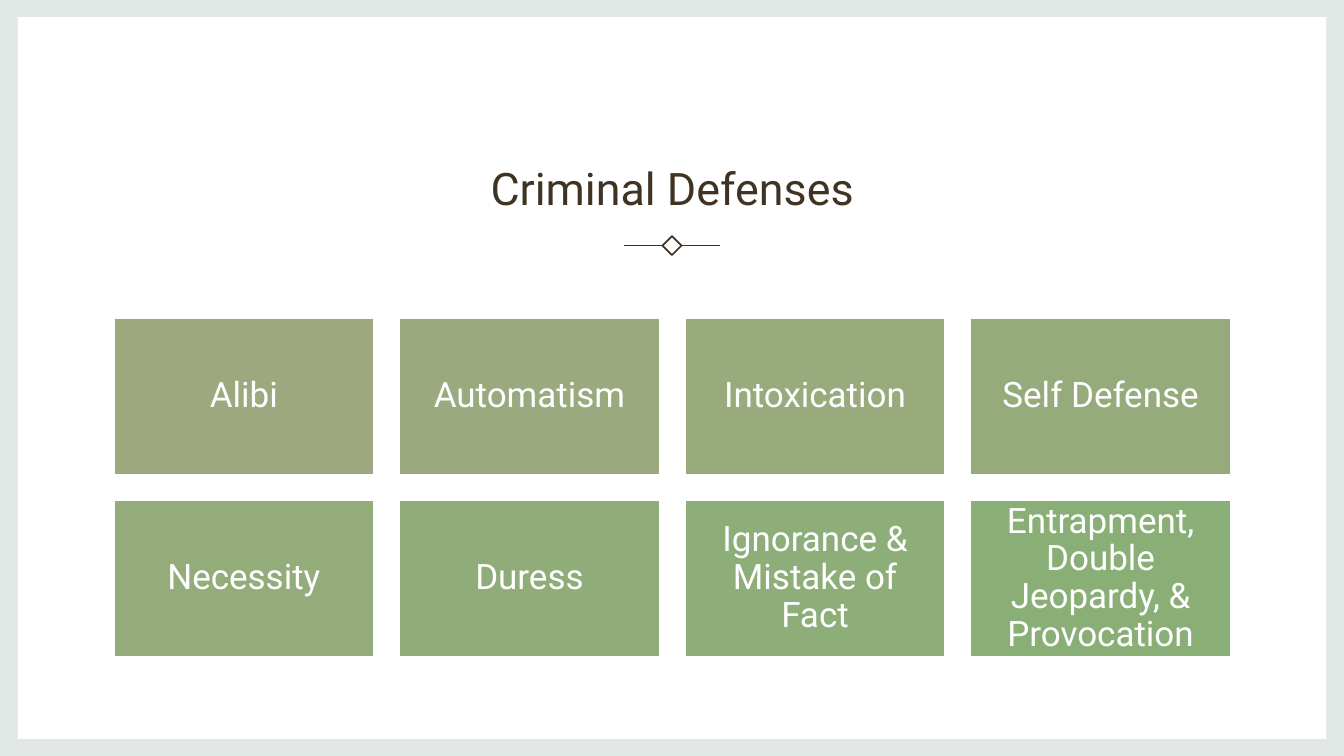
from dataclasses import dataclass

from lxml.etree import SubElement
from pptx import Presentation
from pptx.dml.color import RGBColor
from pptx.enum.shapes import MSO_CONNECTOR, MSO_SHAPE
from pptx.enum.text import MSO_ANCHOR, PP_ALIGN
from pptx.oxml.ns import qn
from pptx.shapes.autoshape import Shape
from pptx.slide import Slide
from pptx.util import Pt

FONT = "Roboto"
WHITE = "FFFFFF"
BORDER = "E2E8E6"
BROWN = "413324"
SLIDE_WIDTH, SLIDE_HEIGHT = 960, 540
COLUMNS = 4
GRID_LEFT, GRID_TOP = 81.36, 227.52
COLUMN_STEP, ROW_STEP = 204, 129.9
CARD_WIDTH, CARD_HEIGHT = 185.6, 111.36
ORNAMENT_Y = 175.4


@dataclass(frozen=True)
class Box:
    left: float
    top: float
    width: float
    height: float


@dataclass(frozen=True)
class Defense:
    name: str
    fill: str


DEFENSES = [
    Defense("Alibi", "9DA87F"),
    Defense("Automatism", "9BA97E"),
    Defense("Intoxication", "99AA7D"),
    Defense("Self Defense", "96AB7C"),
    Defense("Necessity", "93AC7A"),
    Defense("Duress", "90AD79"),
    Defense("Ignorance & Mistake of Fact", "8DAE78"),
    Defense("Entrapment, Double Jeopardy, & Provocation", "89AF77"),
]


def color(value: str) -> RGBColor:
    return RGBColor.from_string(value)


def add_rectangle(slide: Slide, box: Box, fill: str | None = None,
                  line: str | None = None, line_width: float = 1) -> Shape:
    rectangle = slide.shapes.add_shape(
        MSO_SHAPE.RECTANGLE, Pt(box.left), Pt(box.top), Pt(box.width), Pt(box.height))
    rectangle.shadow.inherit = False
    if fill:
        rectangle.fill.solid()
        rectangle.fill.fore_color.rgb = color(fill)
    else:
        rectangle.fill.background()
    if line:
        rectangle.line.color.rgb = color(line)
        rectangle.line.width = Pt(line_width)
    else:
        rectangle.line.fill.background()
    return rectangle


def write_text(holder: Shape, text: str, size: float, text_color: str,
               spacing: float, anchor: MSO_ANCHOR) -> None:
    frame = holder.text_frame
    frame.word_wrap = True
    frame.vertical_anchor = anchor
    paragraph = frame.paragraphs[0]
    paragraph.text = text
    paragraph.alignment = PP_ALIGN.CENTER
    paragraph.line_spacing = spacing
    paragraph.font.name = FONT
    paragraph.font.size = Pt(size)
    paragraph.font.color.rgb = color(text_color)


def add_title(slide: Slide, text: str) -> None:
    title = slide.shapes.add_textbox(Pt(81.36), Pt(75.6), Pt(797.76), Pt(81.36))
    write_text(title, text, 32, BROWN, 1.1, MSO_ANCHOR.BOTTOM)


def add_ornament_line(slide: Slide, start: float, end: float) -> None:
    line = slide.shapes.add_connector(
        MSO_CONNECTOR.STRAIGHT, Pt(start), Pt(ORNAMENT_Y), Pt(end), Pt(ORNAMENT_Y))
    line.line.color.rgb = color(BROWN)
    line.line.width = Pt(1.25)
    SubElement(line._element.spPr, qn("a:effectLst"))


def add_ornament(slide: Slide) -> None:
    side = 9.6
    center = SLIDE_WIDTH / 2
    diamond = add_rectangle(
        slide, Box(center - side / 2, ORNAMENT_Y - side / 2, side, side),
        line=BROWN, line_width=1.25)
    diamond.rotation = 45
    add_ornament_line(slide, center + 6.8, center + 34.2)
    add_ornament_line(slide, center - 34.2, center - 6.8)


def add_card(slide: Slide, index: int, defense: Defense) -> None:
    row, column = divmod(index, COLUMNS)
    box = Box(GRID_LEFT + column * COLUMN_STEP, GRID_TOP + row * ROW_STEP,
              CARD_WIDTH, CARD_HEIGHT)
    card = add_rectangle(slide, box, defense.fill, WHITE)
    frame = card.text_frame
    frame.margin_left = frame.margin_right = Pt(7.5)
    frame.margin_top = frame.margin_bottom = Pt(7.5)
    write_text(card, defense.name, 25, WHITE, 0.9, MSO_ANCHOR.MIDDLE)


def main() -> None:
    presentation = Presentation()
    presentation.slide_width = Pt(SLIDE_WIDTH)
    presentation.slide_height = Pt(SLIDE_HEIGHT)
    slide = presentation.slides.add_slide(presentation.slide_layouts[6])
    add_rectangle(slide, Box(0, 0, SLIDE_WIDTH, SLIDE_HEIGHT), BORDER)
    add_rectangle(slide, Box(12.72, 12.24, 934.56, 515.52), WHITE)
    add_title(slide, "Criminal Defenses")
    add_ornament(slide)
    for index, defense in enumerate(DEFENSES):
        add_card(slide, index, defense)
    presentation.save("out.pptx")


if __name__ == "__main__":
    main()
